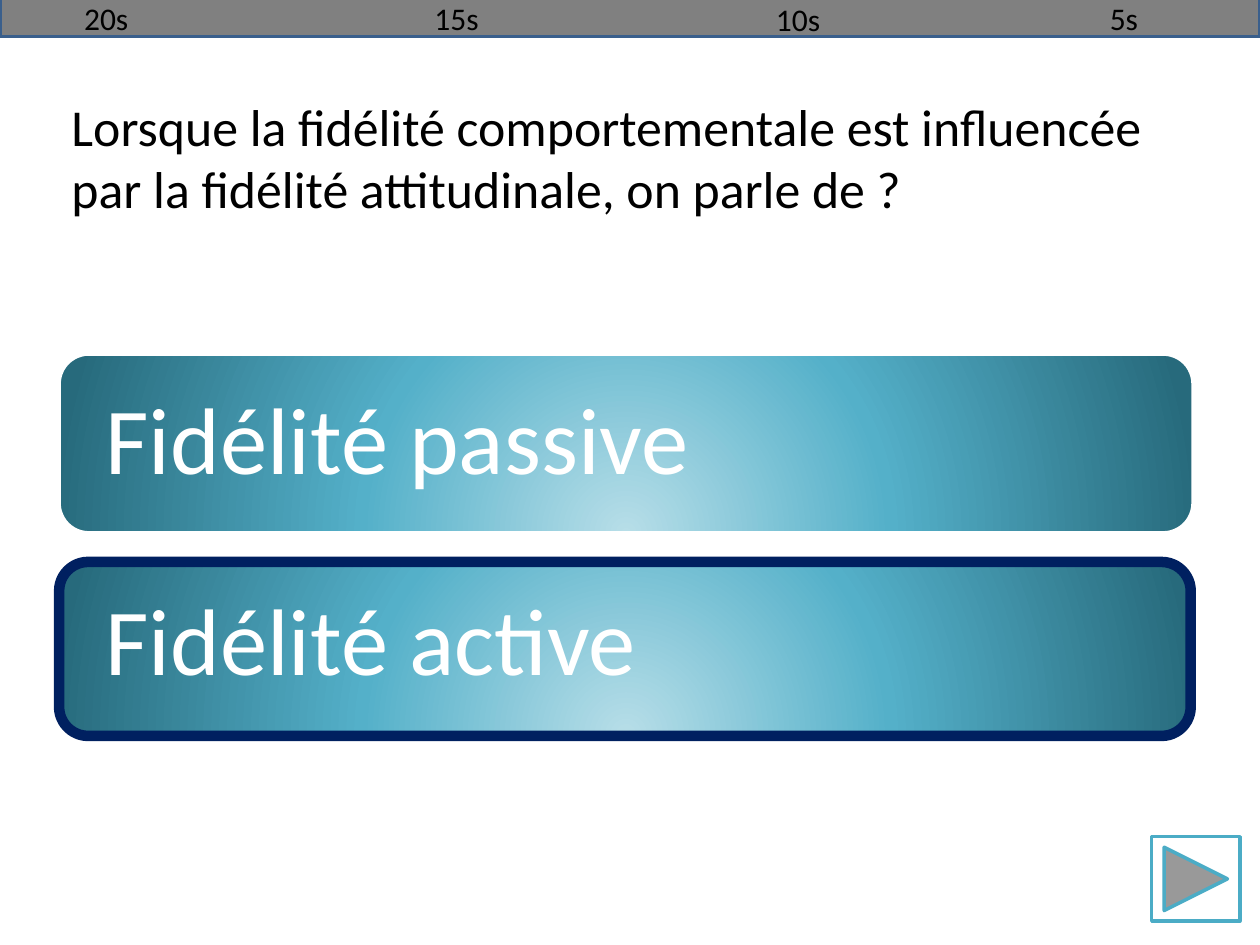
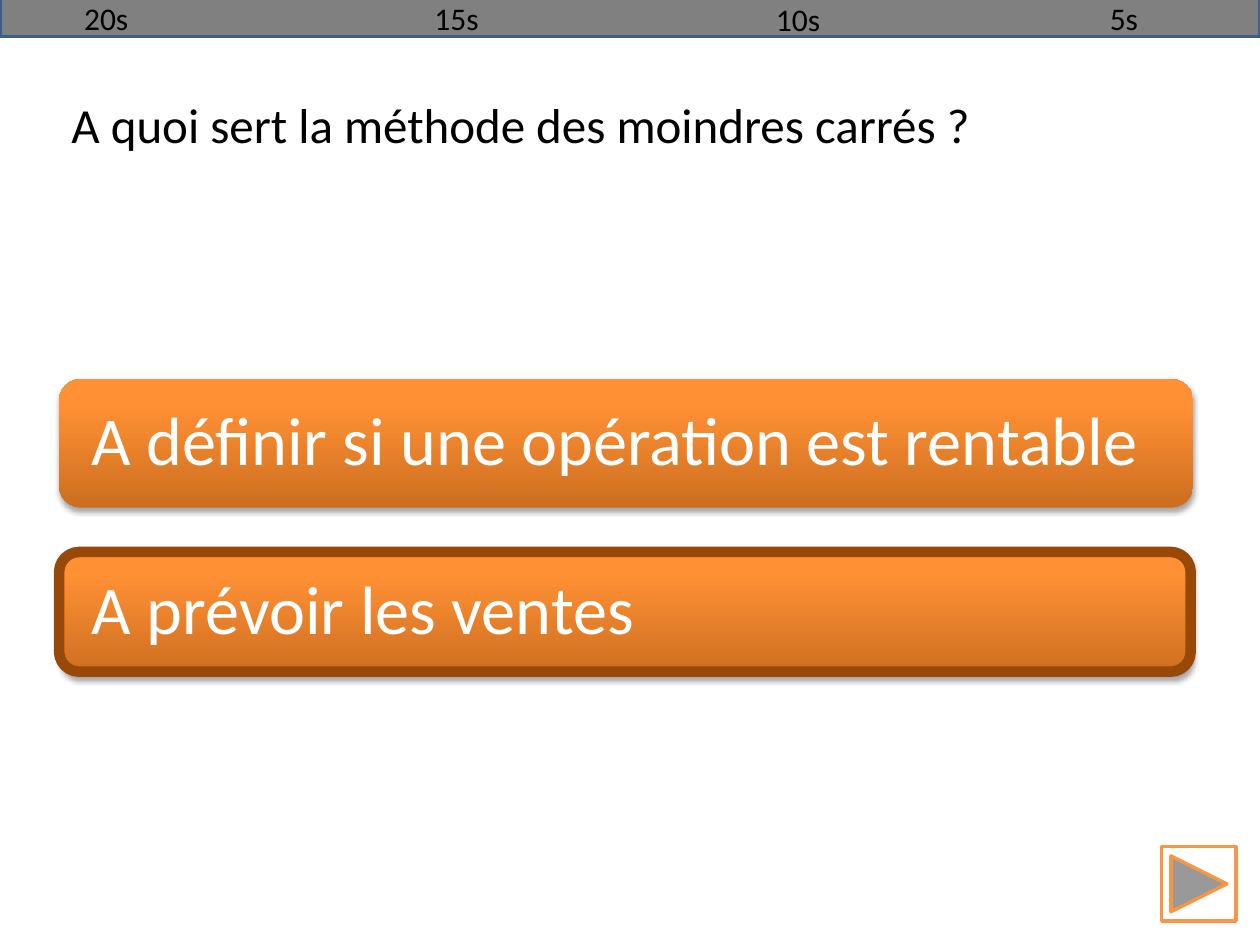
"""Build two timed quiz slides, each with a question, two answers and a marked solution."""
import pptx
import pptx.dml.color
import pptx.enum.shapes
import pptx.enum.text
import pptx.oxml
import pptx.oxml.ns
import pptx.util

Pt = pptx.util.Pt
SHAPE = pptx.enum.shapes.MSO_SHAPE
ANCHOR = pptx.enum.text.MSO_ANCHOR

QUIZZES = [
    dict(
        question="Lorsque la fidélité comportementale est influencée par la fidélité attitudinale, "
                 "on parle de ?",
        question_size=29.6,
        answers=["Fidélité passive", "Fidélité active"],
        answer_size=54, top=202.3, height=102.2, step=115.2, inset=21.6,
        stops=[(0, "B7DEE8"), (46, "54B0C9"), (100, "276A7C")],
        direction='<a:path path="circle"><a:fillToRect l="50000" t="130000" r="50000" b="-30000"/></a:path>',
        answer_line="FFFFFF", shadow=False,
        marker=(321.1, 99.4, "002060"),
        button=(658.1, 478.1, 50.4, 48.2, "4BACC6"),
    ),
    dict(
        question="A quoi sert la méthode des moindres carrés ?",
        question_size=28,
        answers=["A définir si une opération est rentable", "A prévoir les ventes"],
        answer_size=39, top=216.7, height=73.4, step=96.5, inset=15.1,
        stops=[(0, "CC6E20"), (80, "FF9034"), (100, "FF9136")],
        direction='<a:lin ang="16200000" scaled="0"/>',
        answer_line=None, shadow=True,
        marker=(315.4, 68.4, "984807"),
        button=(663.8, 483.8, 42.5, 42.5, "F79646"),
    ),
]
TIMER_LABELS = [("20s", 41, -4.3), ("15s", 241.2, -4.3), ("10s", 436.3, -3.6), ("5s", 627.1, -4.3)]
LEFT, WIDTH = 33.8, 648
NS = pptx.oxml.ns.nsdecls("a")


def rgb(color):
    return pptx.dml.color.RGBColor.from_string(color)


def write(sp, text, size, color="000000", inset=None, anchor=ANCHOR.TOP, spacing=None, wrap=True):
    tf = sp.text_frame
    tf.word_wrap = wrap
    tf.vertical_anchor = anchor
    if inset is not None:
        tf.margin_left = tf.margin_right = tf.margin_top = tf.margin_bottom = Pt(inset)
    p = tf.paragraphs[0]
    p.alignment = pptx.enum.text.PP_ALIGN.LEFT
    if spacing:
        p.line_spacing = spacing
    r = p.add_run()
    r.text = text
    r.font.name, r.font.size, r.font.color.rgb = "Calibri", Pt(size), rgb(color)


def add_text(s, box, text, **style):
    write(s.shapes.add_textbox(*map(Pt, box)), text, **style)


def add_shape(s, kind, box, fill=None, line=None, weight=2):
    sp = s.shapes.add_shape(kind, *map(Pt, box))
    sp.shadow.inherit = False
    if fill:
        sp.fill.solid()
        sp.fill.fore_color.rgb = rgb(fill)
    else:
        sp.fill.background()
    if line:
        sp.line.color.rgb = rgb(line)
        sp.line.width = Pt(weight)
    else:
        sp.line.fill.background()
    return sp


def set_gradient(sp, stops, direction):
    gs = "".join(f'<a:gs pos="{pos * 1000}"><a:srgbClr val="{color}"/></a:gs>' for pos, color in stops)
    gradient = pptx.oxml.parse_xml(
        f'<a:gradFill {NS} rotWithShape="1"><a:gsLst>{gs}</a:gsLst>{direction}</a:gradFill>')
    props = sp.element.spPr
    props.replace(props.find(pptx.oxml.ns.qn("a:noFill")), gradient)


def set_shadow(sp):
    effects = sp.element.spPr.find(pptx.oxml.ns.qn("a:effectLst"))
    effects.append(pptx.oxml.parse_xml(
        f'<a:outerShdw {NS} blurRad="{Pt(3.1)}" dist="{Pt(1.8)}" dir="5400000" rotWithShape="0">'
        '<a:srgbClr val="000000"><a:alpha val="35000"/></a:srgbClr></a:outerShdw>'))


def add_answers(s, quiz):
    for i, answer in enumerate(quiz["answers"]):
        box = (LEFT, quiz["top"] + i * quiz["step"], WIDTH, quiz["height"])
        sp = add_shape(s, SHAPE.ROUNDED_RECTANGLE, box, line=quiz["answer_line"])
        set_gradient(sp, quiz["stops"], quiz["direction"])
        if quiz["shadow"]:
            set_shadow(sp)
        write(sp, answer, quiz["answer_size"], color="FFFFFF", inset=quiz["inset"],
              anchor=ANCHOR.MIDDLE, spacing=0.9)


def add_timer(s):
    add_shape(s, SHAPE.RECTANGLE, (0, -1.4, 720, 22.3), fill="808080", line="3A5F8C")
    for label, left, top in TIMER_LABELS:
        add_text(s, (left, top, 45.4 if len(label) > 2 else 33.8, 28.8), label, size=18, wrap=False)


def add_quiz(prs, quiz):
    s = prs.slides.add_slide(prs.slide_layouts[6])
    add_answers(s, quiz)
    add_text(s, (LEFT, 50.4, WIDTH, 87.8), quiz["question"], size=quiz["question_size"])
    top, height, color = quiz["marker"]
    add_shape(s, SHAPE.ROUNDED_RECTANGLE, (LEFT, top, 646.6, height), line=color, weight=6)
    *box, color = quiz["button"]
    button = add_shape(s, SHAPE.ACTION_BUTTON_BACK_OR_PREVIOUS, box, fill="FFFFFF", line=color)
    button.rotation = 180
    add_timer(s)


def main():
    prs = pptx.Presentation()
    prs.slide_width, prs.slide_height = Pt(720), Pt(540)
    for quiz in QUIZZES:
        add_quiz(prs, quiz)
    prs.save("out.pptx")


if __name__ == "__main__":
    main()
